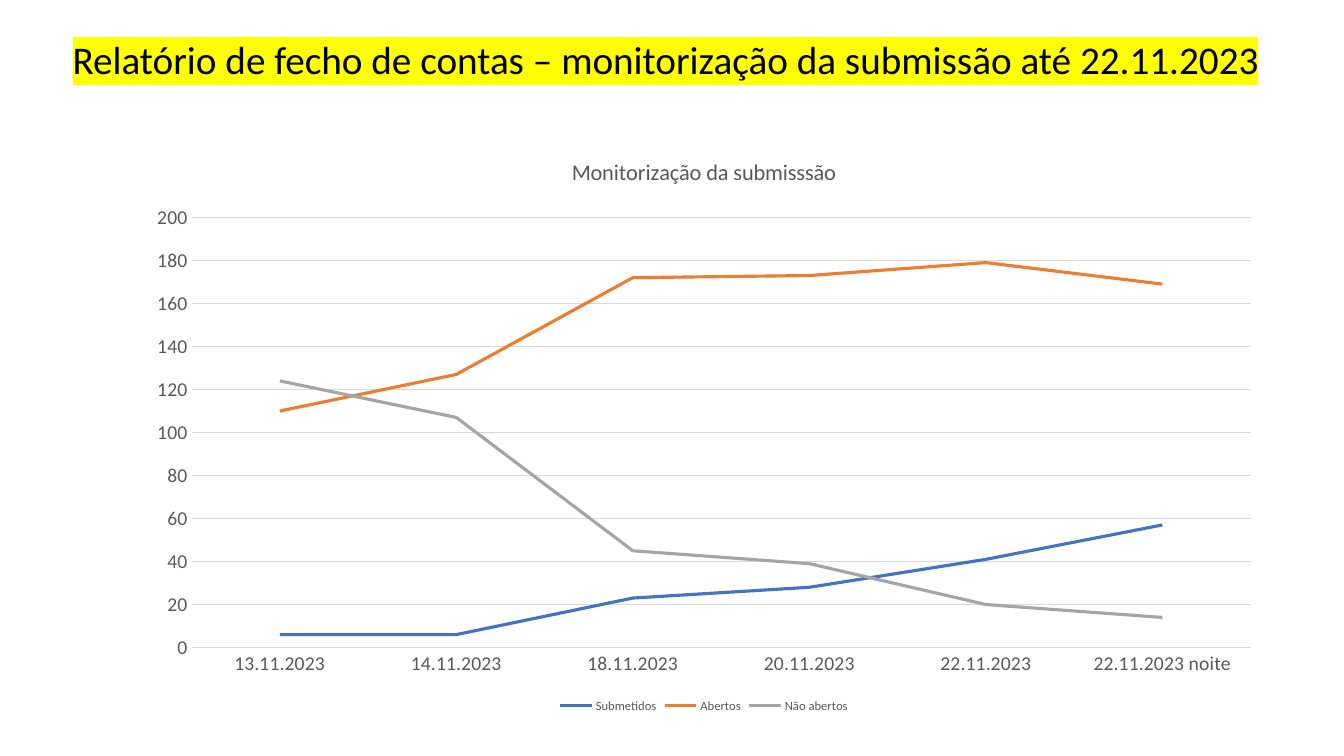
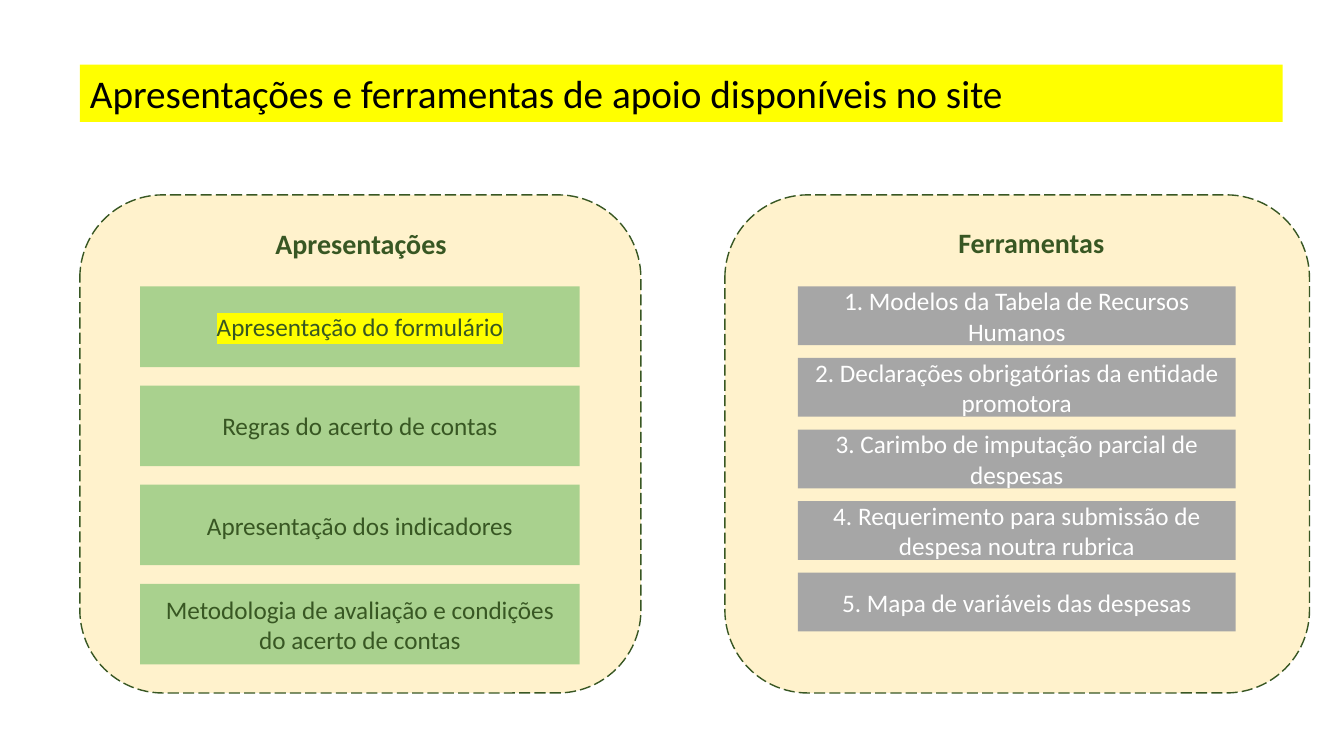
from lxml.etree import SubElement
from pptx import Presentation
from pptx.chart.data import CategoryChartData
from pptx.dml.color import RGBColor
from pptx.enum.chart import XL_CHART_TYPE, XL_LEGEND_POSITION, XL_TICK_MARK
from pptx.enum.dml import MSO_LINE
from pptx.enum.shapes import MSO_SHAPE
from pptx.enum.text import MSO_ANCHOR, MSO_AUTO_SIZE, PP_ALIGN
from pptx.oxml.ns import qn
from pptx.util import Inches, Pt

YELLOW, CREAM, FOREST, GREEN = "FFFF00", "FFF2CC", "385723", "A9D18E"
GREY, WHITE, BLACK, AXIS_TEXT, GRID_LINE = "A6A6A6", "FFFFFF", "000000", "595959", "D9D9D9"


def rgb(value):
    return RGBColor.from_string(value)


class Deck:
    """Holds the style and current slide; places are columns and rows of a 160 by 90 grid."""

    font = "Calibri"
    columns, rows = 160, 90

    def __init__(self):
        self.show = Presentation()
        self.show.slide_width, self.show.slide_height = Inches(13.333), Inches(7.5)
        self.slide = None

    def place(self, left, top, width, height):
        column = self.show.slide_width / self.columns
        row = self.show.slide_height / self.rows
        return [round(n) for n in (left * column, top * row, width * column, height * row)]

    def style(self, font, size, color, bold=False):
        font.name, font.size, font.bold = self.font, Pt(size), bold
        font.color.rgb = rgb(color)

    def add_text(self, shape, text, size, color, bold=False, highlight=None,
                 align=PP_ALIGN.LEFT, anchor=MSO_ANCHOR.TOP):
        frame = shape.text_frame
        frame.word_wrap, frame.auto_size = True, MSO_AUTO_SIZE.NONE
        frame.vertical_anchor = anchor
        paragraph = frame.paragraphs[0]
        paragraph.alignment = align
        run = paragraph.add_run()
        run.text = text
        self.style(run.font, size, color, bold)
        if highlight:
            properties = run._r.get_or_add_rPr()
            mark = SubElement(properties, qn("a:highlight"))
            SubElement(mark, qn("a:srgbClr")).set("val", highlight)
            properties.find(qn("a:solidFill")).addnext(mark)

    def page(self, title, place, fill=None, highlight=None):
        self.slide = self.show.slides.add_slide(self.show.slide_layouts[5])
        heading = self.slide.shapes.title
        heading.left, heading.top, heading.width, heading.height = self.place(*place)
        if fill:
            heading.fill.solid()
            heading.fill.fore_color.rgb = rgb(fill)
        self.add_text(heading, title, 28, BLACK, highlight=highlight)

    def box(self, kind, place, fill, outline=None):
        shape = self.slide.shapes.add_shape(kind, *self.place(*place))
        shape.shadow.inherit = False
        shape.fill.solid()
        shape.fill.fore_color.rgb = rgb(fill)
        if outline:
            shape.line.color.rgb = rgb(outline)
            shape.line.width = Pt(1)
            shape.line.dash_style = MSO_LINE.LONG_DASH
        else:
            shape.line.fill.background()
        return shape

    def panel(self, left, width, heading, heading_place):
        self.box(MSO_SHAPE.ROUNDED_RECTANGLE, (left, 23.2, width, 59.3), CREAM, FOREST)
        label = self.slide.shapes.add_textbox(*self.place(*heading_place))
        self.add_text(label, heading, 20, FOREST, bold=True)

    def cards(self, texts, left, width, height, step, fill, color, marked=()):
        for index, text in enumerate(texts):
            card = self.box(MSO_SHAPE.RECTANGLE,
                            (left, 34.1 + index * step, width, height), fill)
            self.add_text(card, text, 18, color, highlight=YELLOW if text in marked else None,
                          align=PP_ALIGN.CENTER, anchor=MSO_ANCHOR.MIDDLE)

    def line_chart(self, place, title, days, series):
        data = CategoryChartData()
        data.categories = days
        for name, (color, values) in series.items():
            data.add_series(name, values)
        chart = self.slide.shapes.add_chart(XL_CHART_TYPE.LINE, *self.place(*place), data).chart
        self.style(chart.font, 10, BLACK)

        chart.has_title = True
        caption = chart.chart_title.text_frame.paragraphs[0].add_run()
        caption.text = title
        self.style(caption.font, 16, AXIS_TEXT)

        chart.has_legend = True
        chart.legend.position = XL_LEGEND_POSITION.BOTTOM
        chart.legend.include_in_layout = False
        self.style(chart.legend.font, 9, AXIS_TEXT)

        days_axis, count_axis = chart.category_axis, chart.value_axis
        for axis in (days_axis, count_axis):
            axis.major_tick_mark = axis.minor_tick_mark = XL_TICK_MARK.NONE
            self.style(axis.tick_labels.font, 14, AXIS_TEXT)
        count_axis.minimum_scale, count_axis.maximum_scale, count_axis.major_unit = 0, 200, 20
        count_axis.format.line.fill.background()
        count_axis.has_major_gridlines = True
        for line in (days_axis.format.line, count_axis.major_gridlines.format.line):
            line.color.rgb = rgb(GRID_LINE)
            line.width = Pt(0.75)

        plot = chart.plots[0]
        plot.vary_by_categories = False
        for curve in plot.series:
            curve.smooth = False
            curve.format.line.color.rgb = rgb(series[curve.name][0])
            curve.format.line.width = Pt(2.25)


def main():
    deck = Deck()

    deck.page("Relatório de fecho de contas – monitorização da submissão até 22.11.2023",
              (7.44, 3.6, 148.1, 6.84), highlight=YELLOW)
    deck.line_chart(
        (16, 16.2, 135.6, 69.2),
        "Monitorização da submisssão",
        ["13.11.2023", "14.11.2023", "18.11.2023", "20.11.2023", "22.11.2023",
         "22.11.2023 noite"],
        {"Submetidos": ("4472C4", [6, 6, 23, 28, 41, 57]),
         "Abertos": ("ED7D31", [110, 127, 172, 173, 179, 169]),
         "Não abertos": ("A5A5A5", [124, 107, 45, 39, 20, 14])})

    deck.page("Apresentações e ferramentas de apoio disponíveis no site",
              (9.5, 7.68, 143.2, 6.84), fill=YELLOW)
    deck.panel(9.5, 66.8, "Apresentações", (31.6, 26.4, 26.8, 5.3))
    deck.cards(["Apresentação do formulário", "Regras do acerto de contas",
                "Apresentação dos indicadores",
                "Metodologia de avaliação e condições do acerto de contas"],
               16.7, 52.3, 9.6, 11.8, GREEN, FOREST, marked=["Apresentação do formulário"])
    deck.panel(86.3, 69.6, "Ferramentas", (112.9, 26.3, 20.4, 5.3))
    deck.cards(["1. Modelos da Tabela de Recursos Humanos",
                "2. Declarações obrigatórias da entidade promotora",
                "3. Carimbo de imputação parcial de despesas",
                "4. Requerimento para submissão de despesa noutra rubrica",
                "5. Mapa de variáveis das despesas"],
               95, 52.1, 7, 8.52, GREY, WHITE)

    deck.show.save("out.pptx")


if __name__ == "__main__":
    main()
